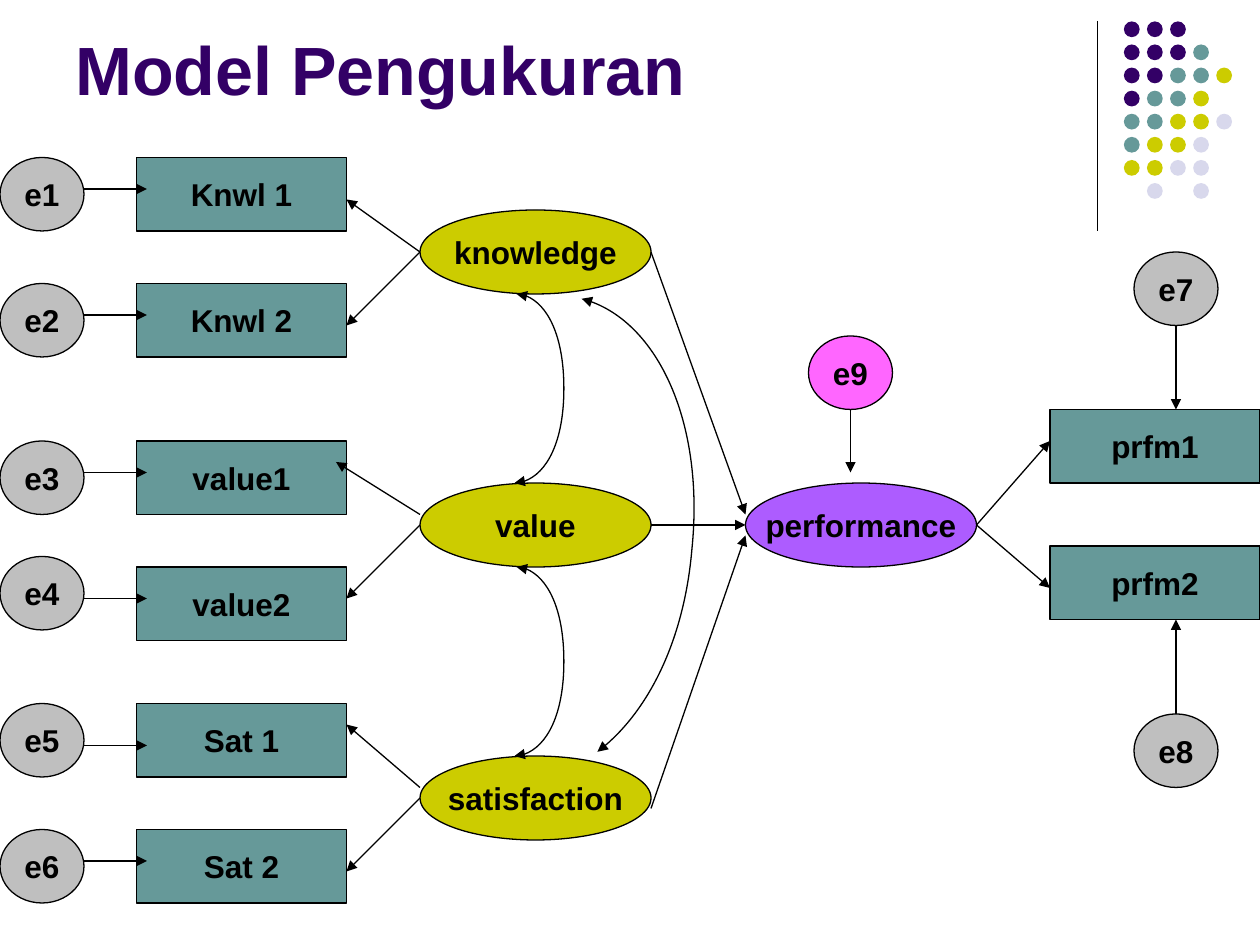
import pptx
import pptx.util
import pptx.dml.color
import pptx.enum.shapes
import pptx.enum.text
import pptx.oxml
import pptx.oxml.ns

HUES = {"ink": "000000", "plum": "330066", "teal": "669999", "lime": "CCCC00",
        "pale": "D8D8EC", "gray": "BFBFBF", "pink": "FF66FF", "violet": "AD5CFF"}
COLS, ROWS = 120, 90
TITLE = "Model Pengukuran"
DOTS = ["PPP", "PPPT", "PPTTL", "PTTL", "TTLLW", "TLLW", "LLWW", " W W"]
KEYS = {"P": "plum", "T": "teal", "L": "lime", "W": "pale"}

KINDS = {"error": ("OVAL", 8, 7), "item": ("RECTANGLE", 20, 7),
         "factor": ("OVAL", 22, 8)}
NODES = [
    ("error", "gray", [("e1", 0, 15), ("e2", 0, 27), ("e3", 0, 42), ("e4", 0, 53),
                       ("e5", 0, 67), ("e6", 0, 79), ("e7", 108, 24), ("e8", 108, 68)]),
    ("error", "pink", [("e9", 77, 32)]),
    ("item", "teal", [("Knwl 1", 13, 15), ("Knwl 2", 13, 27), ("value1", 13, 42),
                      ("value2", 13, 54), ("Sat 1", 13, 67), ("Sat 2", 13, 79),
                      ("prfm1", 100, 39), ("prfm2", 100, 52)]),
    ("factor", "lime", [("knowledge", 40, 20), ("value", 40, 46), ("satisfaction", 40, 72)]),
    ("factor", "violet", [("performance", 71, 46)]),
]
LINKS = [(8, y, 14, y) for y in (18, 30, 45, 57, 71, 82)] + [
    (40, 24, 33, 19), (40, 24, 33, 31),
    (40, 49, 32, 44), (40, 50, 33, 57),
    (40, 75, 33, 69), (40, 76, 33, 83),
    (62, 24, 71, 49), (62, 50, 71, 50), (62, 77, 71, 51),
    (81, 39, 81, 45), (112, 31, 112, 39), (112, 68, 112, 59),
    (93, 50, 100, 42), (93, 50, 100, 56)]
BOW = [(49.2, 0), (51.7, 0), (53.7, 4), (53.7, 9), (53.7, 14), (51.7, 18), (49, 18)]
CURVES = [[(x, y + top) for x, y in BOW] for top in (28, 54)] + [
    [(55.4, 28.45), (62.5, 30.25), (67.1, 40.6), (65.9, 52.3),
     (65.2, 60.6), (61.7, 68), (56.9, 71.6)]]

deck = pptx.Presentation()
deck.slide_width = pptx.util.Inches(10)
deck.slide_height = pptx.util.Inches(7.5)
slide = deck.slides.add_slide(deck.slide_layouts[6])
cell = deck.slide_width / COLS


def grid(*nums):
    return [round(n * cell) for n in nums]


def hue(name):
    return pptx.dml.color.RGBColor.from_string(HUES[name])


def make(tag, more=""):
    return pptx.oxml.parse_xml(f'<a:{tag} {pptx.oxml.ns.nsdecls("a")} {more}/>')


def style(text, size, name):
    font = text.paragraphs[0].runs[0].font
    font.name, font.size, font.bold = "Arial", pptx.util.Pt(size), True
    font.color.rgb = hue(name)


def paint(shape, fill, edge=True):
    shape.shadow.inherit = False
    shape.fill.solid()
    shape.fill.fore_color.rgb = hue(fill)
    if edge:
        stroke(shape)
    else:
        shape.line.fill.background()


def stroke(shape, *ends):
    shape.line.color.rgb = hue("ink")
    shape.line.width = pptx.util.Pt(0.75)
    for end in ends:
        shape.line._get_or_add_ln().append(make(end, 'type="triangle"'))


def join(x1, y1, x2, y2, *ends):
    line = slide.shapes.add_connector(
        pptx.enum.shapes.MSO_CONNECTOR.STRAIGHT, *grid(x1, y1, x2, y2))
    stroke(line, *ends)
    line._element.spPr.append(make("effectLst"))
    return line


def bend(shape):
    legs = shape._element.xpath(".//a:lnTo")
    for i in range(0, len(legs), 3):
        curve = make("cubicBezTo")
        legs[i].addprevious(curve)
        for leg in legs[i:i + 3]:
            curve.append(leg[0])
            leg.getparent().remove(leg)


join(104.5, 2, 104.5, 22)
group = slide.shapes.add_group_shape()
for row, marks in enumerate(DOTS):
    for col, mark in enumerate(marks):
        if mark in KEYS:
            dot = group.shapes.add_shape(
                pptx.enum.shapes.MSO_SHAPE.OVAL,
                *grid(107.04 + 2.2 * col, 2.04 + 2.2 * row, 1.5, 1.5))
            paint(dot, KEYS[mark], False)

head = slide.shapes.add_textbox(*grid(6, 1.6, 99, 9.4)).text_frame
head.word_wrap = True
head.vertical_anchor = pptx.enum.text.MSO_ANCHOR.BOTTOM
head.text = TITLE
style(head, 39, "plum")

nodes = {}
for kind, fill, places in NODES:
    form, wide, high = KINDS[kind]
    for label, x, y in places:
        node = slide.shapes.add_shape(
            getattr(pptx.enum.shapes.MSO_SHAPE, form), *grid(x, y, wide, high))
        paint(node, fill)
        text = node.text_frame
        text.word_wrap = False
        text.vertical_anchor = pptx.enum.text.MSO_ANCHOR.MIDDLE
        text.text = label
        text.paragraphs[0].alignment = pptx.enum.text.PP_ALIGN.CENTER
        style(text, 18, "ink")
        nodes[label] = node

for link in LINKS:
    line = join(*link, "tailEnd")
    if link[:2] == (112, 68):
        line.begin_connect(nodes["e8"], 0)

for curve in CURVES:
    build = slide.shapes.build_freeform(*grid(*curve[0]))
    build.add_line_segments([grid(*p) for p in curve[1:]], close=False)
    arc = build.convert_to_shape()
    bend(arc)
    arc.shadow.inherit = False
    arc.fill.background()
    stroke(arc, "headEnd", "tailEnd")

deck.save("out.pptx")
